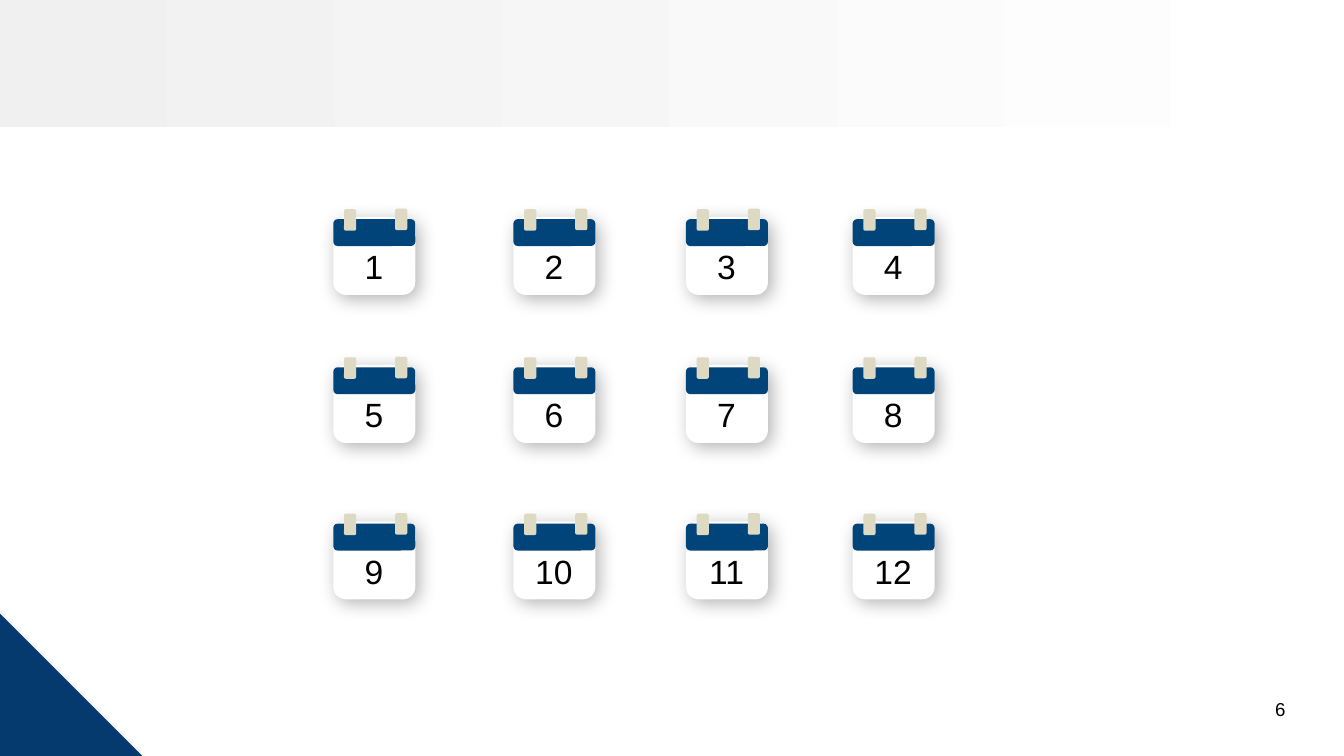
from pptx import Presentation
from pptx.dml.color import RGBColor
from pptx.enum.shapes import MSO_SHAPE as Shape
from pptx.enum.text import MSO_AUTO_SIZE as AutoSize, PP_ALIGN as Align
from pptx.oxml import parse_xml
from pptx.oxml.ns import nsdecls, qn
from pptx.util import Inches, Pt

paint = RGBColor.from_string

deck = Presentation()
deck.slide_width = Inches(10)
deck.slide_height = deck.slide_width * 9 // 16
page = deck.slides.add_slide(deck.slide_layouts[6])
cell = deck.slide_width // 1000


def add_block(shapes, kind, area, color, shadow=None):
    block = shapes.add_shape(kind, *[round(n * cell) for n in area])
    block.shadow.inherit = False
    block.fill.solid()
    block.fill.fore_color.rgb = paint(color)
    block.line.fill.background()
    if kind == Shape.ROUNDED_RECTANGLE:
        block.adjustments[0] = 0.16
    if shadow:
        opacity, blur, distance, angle = shadow
        effects = block._element.spPr.find(qn("a:effectLst"))
        effects.append(parse_xml(
            f'<a:outerShdw {nsdecls("a")} blurRad="{Pt(blur)}" dist="{Pt(distance)}" '
            f'dir="{angle * 60000}" algn="ctr" rotWithShape="0"><a:srgbClr val="000000">'
            f'<a:alpha val="{opacity * 1000}"/></a:srgbClr></a:outerShdw>'))
    return block


def add_label(text, area, size, align, wrap):
    box = page.shapes.add_textbox(*[round(n * cell) for n in area])
    frame = box.text_frame
    frame.word_wrap = wrap
    frame.auto_size = AutoSize.NONE if wrap else AutoSize.SHAPE_TO_FIT_TEXT
    para = frame.paragraphs[0]
    para.alignment = align
    span = para.add_run()
    span.text = text
    span.font.name = "Arial"
    span.font.size = Pt(size)
    span.font.color.rgb = paint("000000")


band = add_block(page.shapes, Shape.RECTANGLE, (0, 0, 996, 94.4), "F0F0F0")
band.fill.gradient()
band.fill.gradient_angle = 0
for stop, color, position in zip(band.fill.gradient_stops, ("F0F0F0", "FFFFFF"), (0, 1)):
    stop.color.rgb = paint(color)
    stop.position = position

add_block(page.shapes, Shape.RIGHT_TRIANGLE, (-0.5, 456, 107, 107), "053A6F", (35, 3.1, 1.8, 90))

columns = (248, 382, 510.4, 634.4)
rows = (161.4, 271.6, 388)
spots = [(left, top) for top in rows for left in columns]
for number, (left, top) in enumerate(spots, 1):
    calendar = page.shapes.add_group_shape().shapes
    rounded = Shape.ROUNDED_RECTANGLE
    add_block(calendar, rounded, (left, top, 61, 58), "FFFFFF", (30, 10, 3, 45))
    add_block(calendar, rounded, (left, top + 1.7, 61, 20), "004479")
    for ring, lift in ((8, 5.7), (46, 6.1)):
        add_block(calendar, rounded, (left + ring, top - lift, 9, 16), "DDD9C3")
    width = 34 if number < 10 else 46 if number == 11 else 48
    add_label(str(number), (left + 30.4 - width / 2, top + 16.7, width, 40), 18, Align.LEFT, False)

add_label("6", (733, 514, 233.4, 30), 10, Align.RIGHT, True)

deck.save("out.pptx")
